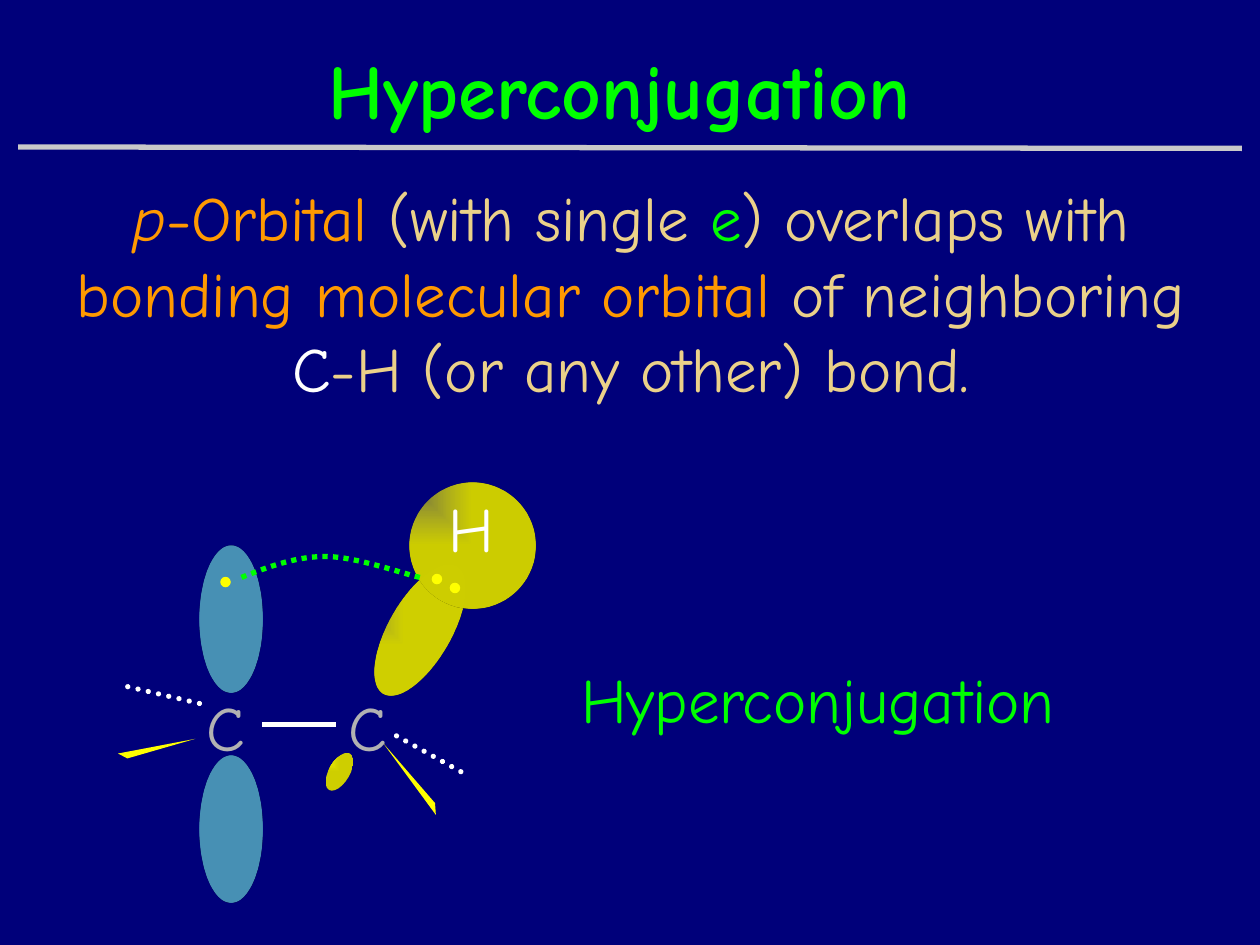
import pptx
import pptx.dml.color
import pptx.enum.shapes
import pptx.enum.text
import pptx.oxml
import pptx.oxml.ns
import pptx.util
from lxml import etree

Pt = pptx.util.Pt
qn = pptx.oxml.ns.qn
FONT = "Comic Neue"
COLORS = {
    "background": "00007A", "green": "00FF00", "orange": "FF9900",
    "sand": "EBD189", "white": "FFFFFF", "yellow": "FFFF00",
    "gray": "B2B2B2", "rule": "C9C9C9", "sky": "66CCFF",
}

# Content: runs are (text, colour, italic), boxes are left, top, width, height
HEADING = [("Hyperconjugation", "green", False)]
STATEMENT = [
    ("p", "orange", True),
    ("-Orbital", "orange", False),
    (" (with single ", "sand", False),
    ("e", "green", False),
    (") overlaps with ", "sand", False),
    ("bonding molecular orbital", "orange", False),
    (" of neighboring ", "sand", False),
    ("C", "white", False),
    ("-H (or any other) bond.", "sand", False),
]
ATOMS = [
    ("C", "gray", (78, 390, 102, 50.4)),
    ("C", "gray", (174, 390, 72, 50.4)),
    ("H", "white", (227.5, 276, 84, 50.4)),
]
# Orbitals: box, rotation, colour, opacity at the focus, shade at the rim (%)
ORBITALS = [
    ((114, 312, 36, 84), 0, "sky", 40, 46.5),
    ((114, 432, 36, 84), 0, "sky", 40, 46.5),
    ((188, 429, 12, 24), 30, "yellow", 100, 61.5),
    ((222, 318, 36, 84), 30, "yellow", 39, 63.5),
    ((234, 276, 72, 72), 0, "yellow", 40, 61.5),
]
# Lines: start, end, colour, dotted
LINES = [
    ((10.3, 84), (709.7, 84.8), "rule", False),
    ((150, 414), (192, 414), "white", False),
    ((114, 402), (70, 391.7), "white", True),
    ((226.6, 420.5), (267, 443), "white", True),
]
WEDGES = [
    [(111.6, 422.2), (67.5, 430.6), (72.8, 433.4)],
    [(218.9, 424.6), (248.6, 458.9), (249.1, 465.7)],
]
ELECTRON_SIZE = 6
ELECTRONS = [(128.9, 332.6), (249.7, 330.9), (260, 336)]
OVERLAP_CURVES = [
    [(138, 330), (153, 324), (169, 318), (186, 318)],
    [(186, 318), (203, 318), (231, 328), (240, 330)],
]
CURVE_STEPS = 16


def rgb(name):
    return pptx.dml.color.RGBColor.from_string(COLORS[name])


def add_text(slide, runs, box, size=36, bold=False, middle=False):
    label = slide.shapes.add_textbox(*map(Pt, box))
    frame = label.text_frame
    frame.word_wrap = True
    anchors = pptx.enum.text.MSO_ANCHOR
    frame.vertical_anchor = anchors.MIDDLE if middle else anchors.TOP
    paragraph = frame.paragraphs[0]
    paragraph.alignment = pptx.enum.text.PP_ALIGN.CENTER
    for text, color, italic in runs:
        run = paragraph.add_run()
        run.text = text
        run.font.name = FONT
        run.font.size = Pt(size)
        run.font.bold = bold
        run.font.italic = italic
        run.font.color.rgb = rgb(color)


def style_line(line, color, dotted):
    line.width = Pt(3)
    line.color.rgb = rgb(color)
    if dotted:
        dash = etree.SubElement(line._get_or_add_ln(), qn("a:prstDash"))
        dash.set("val", "sysDot")


def add_line(slide, start, end, color, dotted):
    connector = slide.shapes.add_connector(
        pptx.enum.shapes.MSO_CONNECTOR.STRAIGHT, *map(Pt, start + end))
    style_line(connector.line, color, dotted)
    if dotted:
        connector.line._get_or_add_ln().set("cap", "rnd")
    etree.SubElement(connector._element.spPr, qn("a:effectLst"))


def add_ellipse(slide, box, color):
    ellipse = slide.shapes.add_shape(
        pptx.enum.shapes.MSO_SHAPE.OVAL, *map(Pt, box))
    ellipse.shadow.inherit = False
    ellipse.fill.solid()
    ellipse.fill.fore_color.rgb = rgb(color)
    ellipse.line.fill.background()
    return ellipse


def add_orbital(slide, box, rotation, color, opacity, shade):
    orbital = add_ellipse(slide, box, color)
    orbital.rotation = rotation
    gradient = pptx.oxml.parse_xml(
        f'<a:gradFill {pptx.oxml.ns.nsdecls("a")} rotWithShape="1"><a:gsLst>'
        f'<a:gs pos="0"><a:srgbClr val="{COLORS[color]}">'
        f'<a:alpha val="{opacity * 1000}"/></a:srgbClr></a:gs>'
        f'<a:gs pos="100000"><a:srgbClr val="{COLORS[color]}">'
        f'<a:shade val="{int(shade * 1000)}"/></a:srgbClr></a:gs></a:gsLst>'
        '<a:path path="rect"><a:fillToRect r="100000" b="100000"/></a:path>'
        '</a:gradFill>')
    properties = orbital._element.spPr
    properties.replace(properties.find(qn("a:solidFill")), gradient)


def add_outline(slide, points, close):
    corners = [tuple(map(Pt, point)) for point in points]
    builder = slide.shapes.build_freeform(*corners[0])
    builder.add_line_segments(corners[1:], close=close)
    outline = builder.convert_to_shape()
    outline.shadow.inherit = False
    return outline


def bezier(controls, t):
    weights = ((1 - t) ** 3, 3 * t * (1 - t) ** 2, 3 * t * t * (1 - t), t ** 3)
    return tuple(sum(w * point[axis] for w, point in zip(weights, controls))
                 for axis in (0, 1))


def main():
    deck = pptx.Presentation()
    deck.slide_width, deck.slide_height = Pt(720), Pt(540)
    slide = deck.slides.add_slide(deck.slide_layouts[6])
    slide.background.fill.solid()
    slide.background.fill.fore_color.rgb = rgb("background")

    # Heading, statement and caption
    add_text(slide, HEADING, (48, 24.5, 612, 52), size=44, bold=True, middle=True)
    add_text(slide, STATEMENT, (24.5, 98.6, 672, 136.8))
    add_text(slide, HEADING, (307.4, 354.2, 320, 90), middle=True)

    # Orbitals, then bonds and the heading rule
    for orbital in ORBITALS:
        add_orbital(slide, *orbital)
    for line in LINES:
        add_line(slide, *line)
    for corners in WEDGES:
        wedge = add_outline(slide, corners, close=True)
        wedge.fill.solid()
        wedge.fill.fore_color.rgb = rgb("yellow")
        wedge.line.fill.background()

    # Electrons and the overlap between them
    for x, y in ELECTRONS:
        radius = ELECTRON_SIZE / 2
        add_ellipse(slide, (x - radius, y - radius, ELECTRON_SIZE, ELECTRON_SIZE),
                    "yellow")
    track = [OVERLAP_CURVES[0][0]]
    for controls in OVERLAP_CURVES:
        track += [bezier(controls, step / CURVE_STEPS)
                  for step in range(1, CURVE_STEPS + 1)]
    overlap = add_outline(slide, track, close=False)
    overlap.fill.background()
    style_line(overlap.line, "green", True)

    # Atom labels
    for symbol, color, box in ATOMS:
        add_text(slide, [(symbol, color, False)], box)

    deck.save("out.pptx")


if __name__ == "__main__":
    main()
